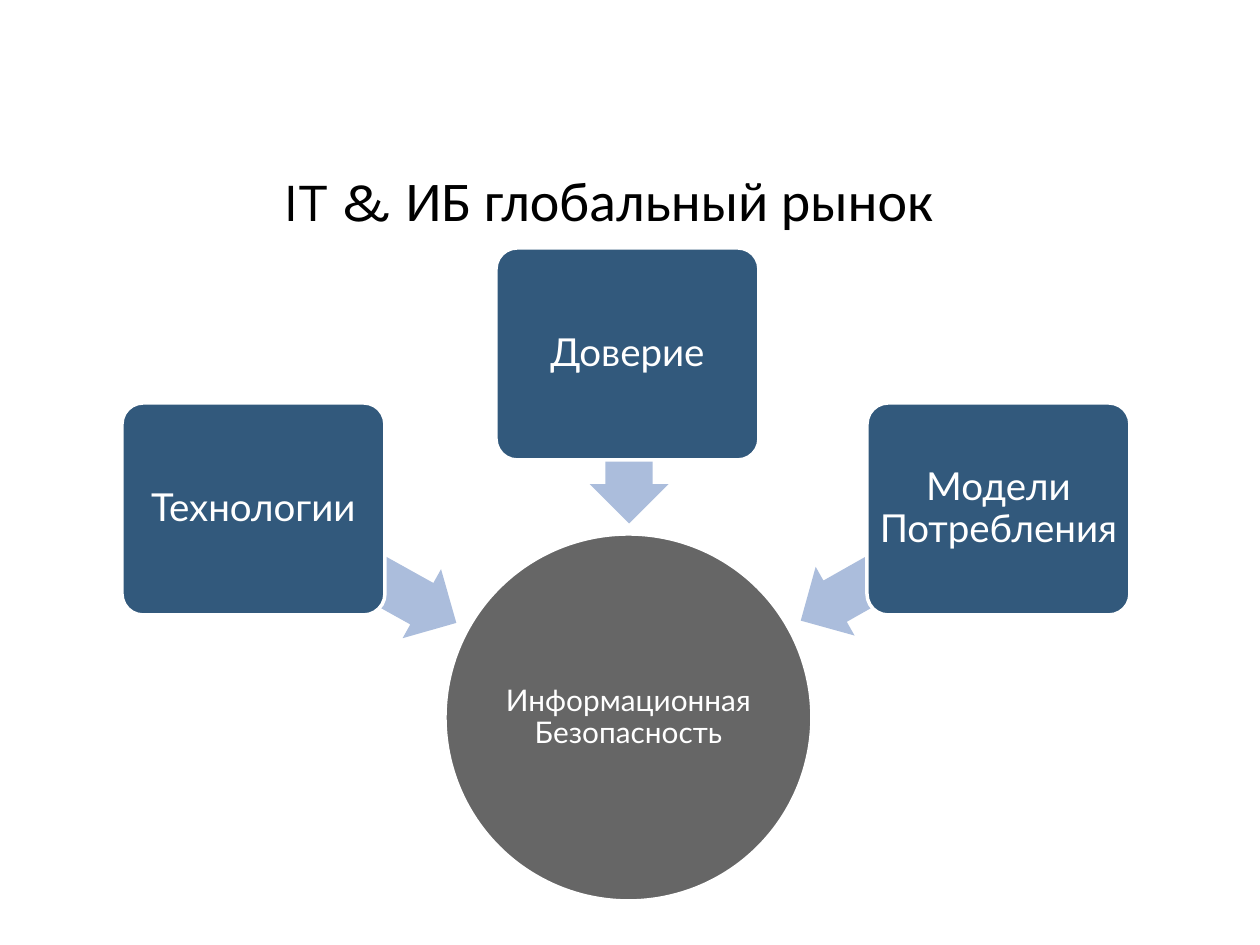
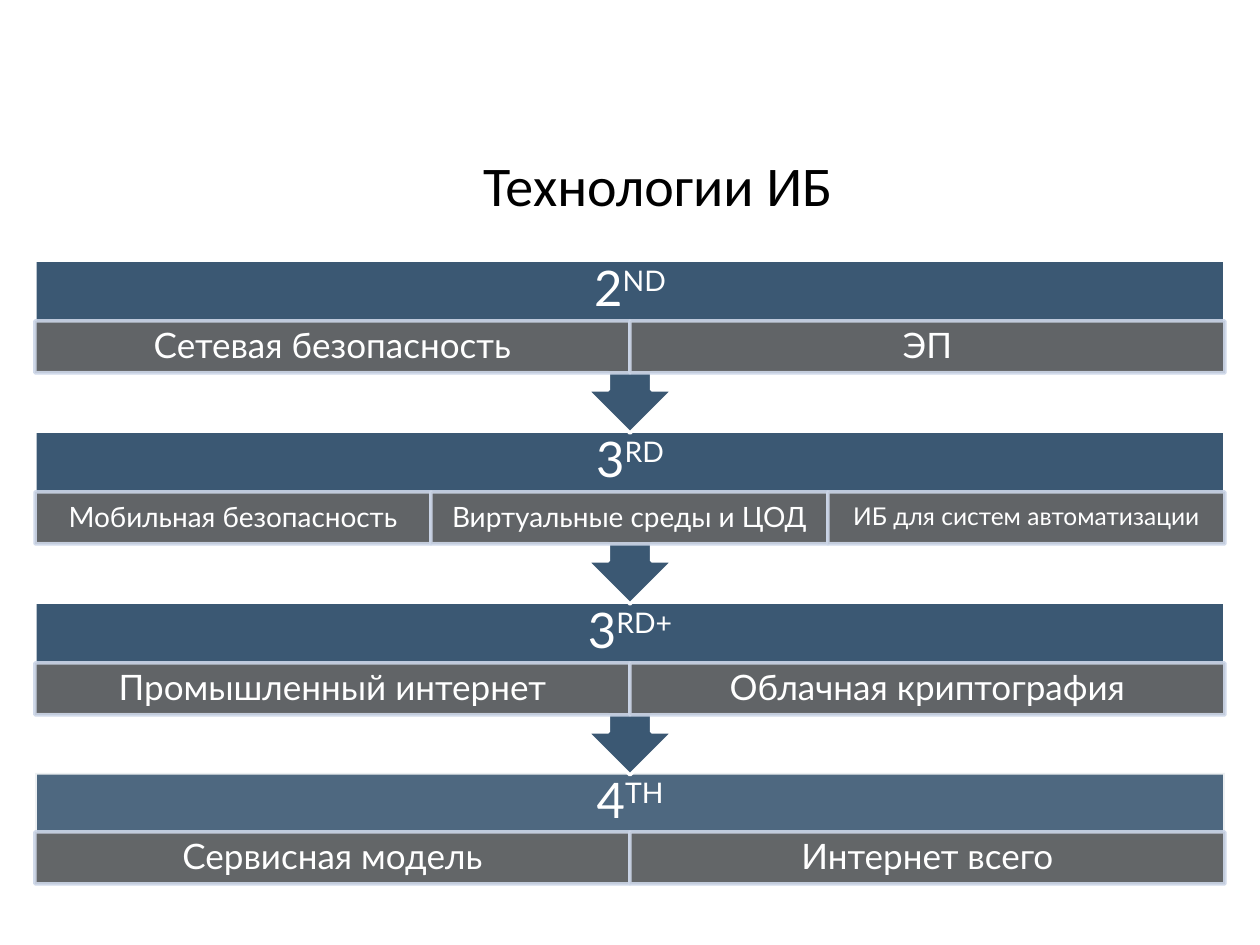
"""Build two slides on the information security market and its technologies."""
from typing import NamedTuple, Optional

from lxml.etree import SubElement
from pptx import Presentation
from pptx.dml.color import RGBColor as RGB
from pptx.enum.shapes import MSO_SHAPE as SHAPE
from pptx.enum.text import MSO_ANCHOR as ANCHOR, MSO_AUTO_SIZE as FIT, PP_ALIGN as ALIGN
from pptx.oxml.ns import qn
from pptx.shapes.autoshape import Shape
from pptx.slide import Slide
from pptx.text.text import TextFrame, _Paragraph as Paragraph
from pptx.util import Emu, Pt

EMU_PER_PX = 914400 / 126
COLORS = {
    "black": "000000",
    "white": "FFFFFF",
    "gray": "666666",
    "arrow": "ABBDDC",
    "factor": "32597C",
    "band": "3B5873",
    "cell_line": "CCD6E8",
}
HEAD_FONT = "Calibri"
BODY_FONT = "Lato"

BAND_LEFT, BAND_TOP, BAND_WIDTH = 35, 260, 1190
BAND_PITCH, CALLOUT_HEIGHT, LAST_HEIGHT = 171, 173, 112
HEAD_HEIGHT, LAST_HEAD_HEIGHT, CELL_HEIGHT = 61, 59, 52
FACTOR_WIDTH, FACTOR_HEIGHT, ARROW_HEIGHT = 263, 212, 79


class Box(NamedTuple):
    left: int
    top: int
    width: int
    height: int


class Factor(NamedTuple):
    text: str
    left: int
    top: int
    arrow: Box
    angle: float


class Cell(NamedTuple):
    text: str
    size: int = 20


class Generation(NamedTuple):
    number: str
    suffix: str
    cells: list[Cell]


FACTORS = [
    Factor("Технологии", 122, 403, Box(239, 527, 232, ARROW_HEIGHT), 209.1),
    Factor("Доверие", 496, 248, Box(544, 399, 170, ARROW_HEIGHT), 270),
    Factor("Модели Потребления", 867, 403, Box(786, 525, 228, ARROW_HEIGHT), 330.5),
]
GENERATIONS = [
    Generation("2", "ND", [Cell("Сетевая безопасность"), Cell("ЭП")]),
    Generation("3", "RD", [
        Cell("Мобильная безопасность", 16),
        Cell("Виртуальные среды и ЦОД", 16),
        Cell("ИБ для систем автоматизации", 14),
    ]),
    Generation("3", "RD+", [Cell("Промышленный интернет"), Cell("Облачная криптография")]),
    Generation("4", "TH", [Cell("Сервисная модель"), Cell("Интернет всего")]),
]


def px(n: int) -> Emu:
    return Emu(round(n * EMU_PER_PX))


def place(box: Box) -> list[Emu]:
    return [px(n) for n in box]


def rgb(name: str) -> RGB:
    return RGB.from_string(COLORS[name])


def add_run(p: Paragraph, text: str, *, size: int, font: str = BODY_FONT,
            color: str = "white", raised: bool = False) -> None:
    r = p.add_run()
    r.text = text
    r.font.size, r.font.name = Pt(size), font
    r.font.color.rgb = rgb(color)
    if raised:
        r.font._element.set("baseline", "30000")


def center_text(tf: TextFrame, inset_x: int, inset_y: int) -> Paragraph:
    tf.word_wrap = True
    tf.vertical_anchor = ANCHOR.MIDDLE
    tf.margin_left = tf.margin_right = px(inset_x)
    tf.margin_top = tf.margin_bottom = px(inset_y)
    p = tf.paragraphs[0]
    p.alignment, p.line_spacing = ALIGN.CENTER, 0.9
    return p


def set_opacity(sp: Shape, percent: int) -> None:
    for clr in sp._element.spPr.iter(qn("a:srgbClr")):
        SubElement(clr, qn("a:alpha")).set("val", str(percent * 1000))


def add_block(s: Slide, kind: SHAPE, box: Box, fill: str,
              line: Optional[str] = "white") -> Shape:
    sp = s.shapes.add_shape(kind, *place(box))
    sp.shadow.inherit = False
    sp.fill.solid()
    sp.fill.fore_color.rgb = rgb(fill)
    if line:
        sp.line.color.rgb = rgb(line)
        sp.line.width = Pt(2)
    else:
        sp.line.fill.background()
    return sp


def add_titled_slide(prs: Presentation, box: Box, runs: list[tuple[str, str]]) -> Slide:
    s = prs.slides.add_slide(prs.slide_layouts[5])
    title = s.shapes.title
    title.left, title.top, title.width, title.height = place(box)
    tf = title.text_frame
    tf.auto_size, tf.vertical_anchor = FIT.NONE, ANCHOR.TOP
    p = tf.paragraphs[0]
    p.alignment = ALIGN.CENTER
    for text, font in runs:
        add_run(p, text, size=32, font=font, color="black")
    return s


def add_factor(s: Slide, factor: Factor) -> None:
    arrow = add_block(s, SHAPE.LEFT_ARROW, factor.arrow, "arrow", None)
    arrow.adjustments[0], arrow.adjustments[1] = 0.6, 0.5
    arrow.rotation = factor.angle
    box = Box(factor.left, factor.top, FACTOR_WIDTH, FACTOR_HEIGHT)
    sp = add_block(s, SHAPE.ROUNDED_RECTANGLE, box, "factor")
    sp.adjustments[0] = 0.1
    add_run(center_text(sp.text_frame, 5, 5), factor.text, size=22)


def add_generation(s: Slide, index: int, gen: Generation) -> None:
    is_last = index == len(GENERATIONS) - 1
    top = BAND_TOP + index * BAND_PITCH
    head_height = LAST_HEAD_HEIGHT if is_last else HEAD_HEIGHT
    if is_last:
        band = add_block(s, SHAPE.RECTANGLE,
                         Box(BAND_LEFT, top, BAND_WIDTH, LAST_HEIGHT), "band")
        set_opacity(band.fill and band, 90)
    else:
        band = add_block(s, SHAPE.UP_ARROW_CALLOUT,
                         Box(BAND_LEFT, top, BAND_WIDTH, CALLOUT_HEIGHT), "band")
        band.rotation = 180

    label = s.shapes.add_textbox(*place(Box(BAND_LEFT, top, BAND_WIDTH, head_height)))
    p = center_text(label.text_frame, 28, 0)
    add_run(p, gen.number, size=28)
    add_run(p, gen.suffix, size=28, raised=True)

    count = len(gen.cells)
    edges = [BAND_LEFT + BAND_WIDTH * i // count for i in range(count + 1)]
    for left, right, cell in zip(edges, edges[1:], gen.cells):
        box = Box(left, top + head_height, right - left, CELL_HEIGHT)
        sp = add_block(s, SHAPE.RECTANGLE, box, "gray", "cell_line")
        set_opacity(sp, 90)
        add_run(center_text(sp.text_frame, cell.size, 3), cell.text, size=cell.size)


def build_market(prs: Presentation) -> None:
    s = add_titled_slide(prs, Box(97, 159, 1024, 108),
                         [("IT & ", "Karla"), ("ИБ глобальный рынок", HEAD_FONT)])
    hub = add_block(s, SHAPE.OVAL, Box(445, 534, 367, 367), "gray")
    add_run(center_text(hub.text_frame, 1, 1), "Информационная Безопасность", size=17)
    for factor in FACTORS:
        add_factor(s, factor)


def build_technologies(prs: Presentation) -> None:
    s = add_titled_slide(prs, Box(146, 144, 1024, 83), [("Технологии ИБ", HEAD_FONT)])
    for index, gen in reversed(list(enumerate(GENERATIONS))):
        add_generation(s, index, gen)


def main() -> None:
    prs = Presentation()
    prs.slide_width, prs.slide_height = px(1260), px(945)
    build_market(prs)
    build_technologies(prs)
    prs.save("out.pptx")


if __name__ == "__main__":
    main()
